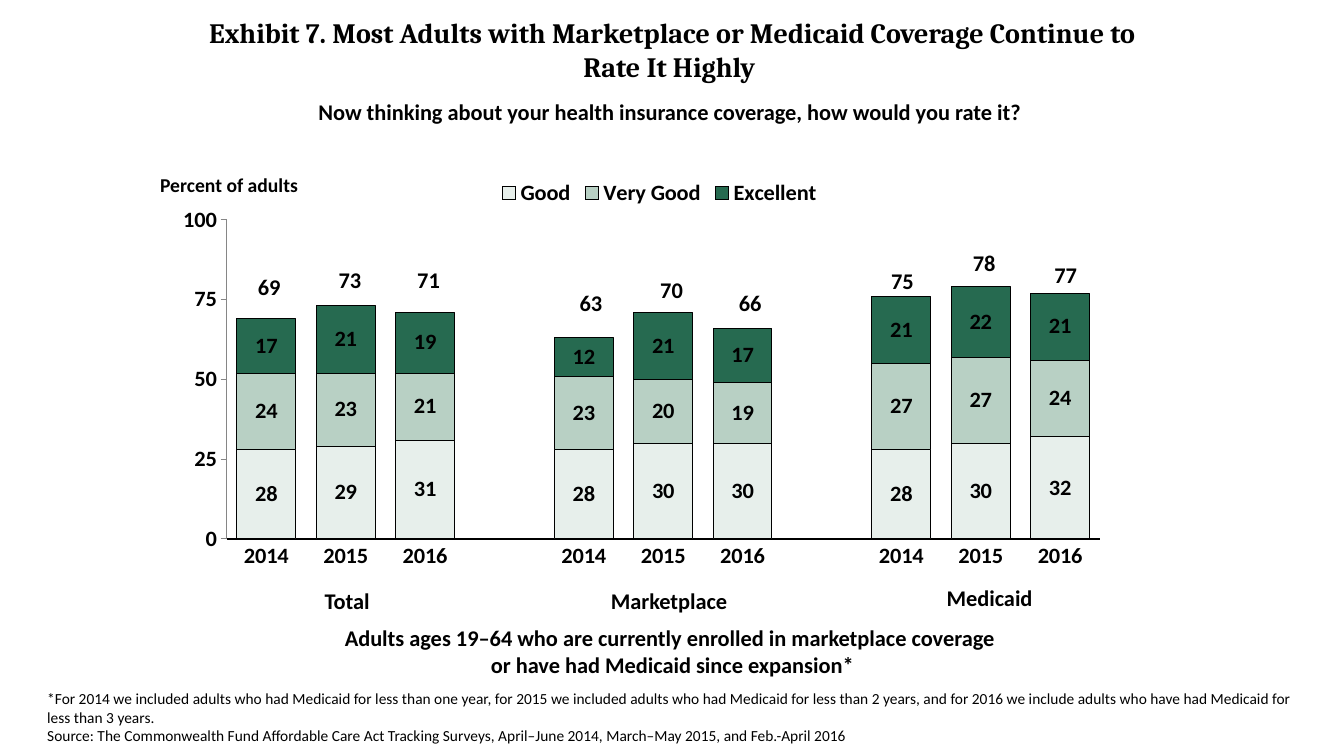
from pptx import Presentation
from pptx.chart.data import CategoryChartData
from pptx.dml.color import RGBColor
from pptx.enum.chart import XL_CHART_TYPE, XL_LEGEND_POSITION, XL_TICK_MARK
from pptx.enum.text import MSO_ANCHOR, MSO_AUTO_SIZE, PP_ALIGN
from pptx.oxml import parse_xml
from pptx.oxml.ns import nsdecls, qn
from pptx.util import Inches, Pt

STACKED = XL_CHART_TYPE.COLUMN_STACKED
LEGEND_TOP = XL_LEGEND_POSITION.TOP
TICK_NONE, TICK_OUT = XL_TICK_MARK.NONE, XL_TICK_MARK.OUTSIDE
LEFT, CENTER = PP_ALIGN.LEFT, PP_ALIGN.CENTER
MIDDLE = MSO_ANCHOR.MIDDLE
NO_FIT = MSO_AUTO_SIZE.NONE
BLACK = "000000"


def color(hex_string):
    return RGBColor.from_string(hex_string)


def write(shape, paragraphs, size, align=LEFT, bold=True, font_name="Calibri"):
    """Fill a shape with paragraphs, each given as a list of lines."""
    frame = shape.text_frame
    frame.word_wrap = True
    frame.auto_size = NO_FIT
    for index, lines in enumerate(paragraphs):
        paragraph = frame.paragraphs[0] if index == 0 else frame.add_paragraph()
        paragraph.alignment = align
        for number, line in enumerate(lines):
            if number:
                paragraph.add_line_break()
            run = paragraph.add_run()
            run.text = line
            run.font.size = Pt(size)
            run.font.name = font_name
            run.font.bold = bold
            run.font.color.rgb = color(BLACK)


presentation = Presentation()
presentation.slide_width = Inches(13.33)
presentation.slide_height = Inches(7.5)
slide = presentation.slides.add_slide(presentation.slide_layouts[5])

# Title
title = slide.shapes.title
title.left, title.top = Inches(1.67), Inches(0.09)
title.width, title.height = Inches(10), Inches(0.8)
title.text_frame.vertical_anchor = MIDDLE
write(title, [["Exhibit 7. Most Adults with Marketplace or Medicaid Coverage "
               "Continue to Rate It Highly "]], 20, CENTER, font_name="Cambria")

# Stacked ratings, three years per coverage group with a gap between groups
ratings = [
    ("Good", "E7EFEB", [28, 29, 31, None, 28, 30, 30, None, 28, 30, 32]),
    ("Very Good", "B8D0C4", [24, 23, 21, None, 23, 20, 19, None, 27, 27, 24]),
    ("Excellent", "005032", [17, 21, 19, None, 12, 21, 17, None, 21, 22, 21]),
]
years = ["2014", "2015", "2016"]
chart_data = CategoryChartData(number_format="0")
chart_data.categories = years + [""] + years + [""] + years
for name, fill, values in ratings:
    chart_data.add_series(name, values)
chart = slide.shapes.add_chart(STACKED, Inches(1.75), Inches(1.67), Inches(9.58),
                               Inches(3.98), chart_data).chart
chart.has_title = False
chart.font.size = Pt(16)
chart.font.bold = True
chart.font.name = "Calibri"
chart.font.color.rgb = color(BLACK)
chart.has_legend = True
chart.legend.position = LEGEND_TOP
chart.legend.include_in_layout = False

plot = chart.plots[0]
plot.gap_width = 35
plot.overlap = 100
plot.vary_by_categories = False
plot.has_data_labels = True
plot.data_labels.show_value = True
plot.data_labels.number_format = "0"
plot.data_labels.number_format_is_linked = False
for series, (name, fill, values) in zip(plot.series, ratings):
    series.format.fill.solid()
    series.format.fill.fore_color.rgb = color(fill)
    series.format.line.color.rgb = color(BLACK)
    series.format.line.width = Pt(0.75)
    if name == "Excellent":
        fill_color = series.format.fill._xPr.find(qn("a:solidFill"))[0]
        fill_color.append(parse_xml(f'<a:alpha {nsdecls("a")} val="85000"/>'))

# Axes
value_axis = chart.value_axis
value_axis.minimum_scale, value_axis.maximum_scale = 0, 100
value_axis.major_unit = 25
value_axis.has_major_gridlines = False
value_axis.major_tick_mark = TICK_OUT
value_axis.tick_labels.number_format = "0"
value_axis.tick_labels.number_format_is_linked = False
value_axis.format.line.color.rgb = color("868686")
category_axis = chart.category_axis
category_axis.major_tick_mark = TICK_NONE
category_axis.format.line.color.rgb = color(BLACK)
category_axis.format.line.width = Pt(2)

# Fixed plot area
plot_area = chart._chartSpace.chart.plotArea
for layout in plot_area.findall(qn("c:layout")):
    plot_area.remove(layout)
plot_area.insert(0, parse_xml(
    f'<c:layout {nsdecls("c")}><c:manualLayout><c:layoutTarget val="inner"/>'
    '<c:xMode val="edge"/><c:yMode val="edge"/><c:x val="0.052"/><c:y val="0.132"/>'
    '<c:w val="0.904"/><c:h val="0.816"/></c:manualLayout></c:layout>'))

# Bar totals: text, left, top
totals = [("69", 2.46, 2.66), ("73", 3.26, 2.59), ("71", 4.04, 2.59),
          ("63", 5.65, 2.82), ("70", 6.45, 2.69), ("66", 7.23, 2.82),
          ("75", 8.74, 2.6), ("78", 9.55, 2.42), ("77", 10.36, 2.54)]
for total, left, top in totals:
    box = slide.shapes.add_textbox(Inches(left), Inches(top), Inches(0.5), Inches(0.37))
    write(box, [[total]], 16)

# Captions: left, top, width, height, paragraphs, size, alignment, bold
captions = [
    (1.67, 0.92, 10, 0.37,
     [["Now thinking about your health insurance coverage, how would you rate it? "]],
     16, CENTER, True),
    (1.49, 1.67, 1.94, 0.34, [["Percent of adults"]], 14, LEFT, True),
    (3.12, 5.78, 0.81, 0.37, [["Total"]], 16, LEFT, True),
    (5.96, 5.78, 1.56, 0.37, [["Marketplace"]], 16, LEFT, True),
    (9.29, 5.75, 1.14, 0.37, [["Medicaid"]], 16, LEFT, True),
    (1.94, 6.14, 9.46, 0.64,
     [["Adults ages 19–64 who are currently enrolled in marketplace coverage ",
       "or have had Medicaid since expansion*"]], 16, CENTER, True),
    (0.37, 6.79, 12.6, 0.66,
     [["*For 2014 we included adults who had Medicaid for less than one year, for 2015 "
       "we included adults who had Medicaid for less than 2 years, and for 2016 we "
       "include adults who have had Medicaid for less than 3 years."],
      ["Source: The Commonwealth Fund Affordable Care Act Tracking Surveys, "
       "April–June 2014, March–May 2015, and Feb.-April 2016"]], 11, LEFT, False),
]
for left, top, width, height, paragraphs, size, align, bold in captions:
    box = slide.shapes.add_textbox(Inches(left), Inches(top), Inches(width), Inches(height))
    write(box, paragraphs, size, align, bold)

presentation.save("out.pptx")
